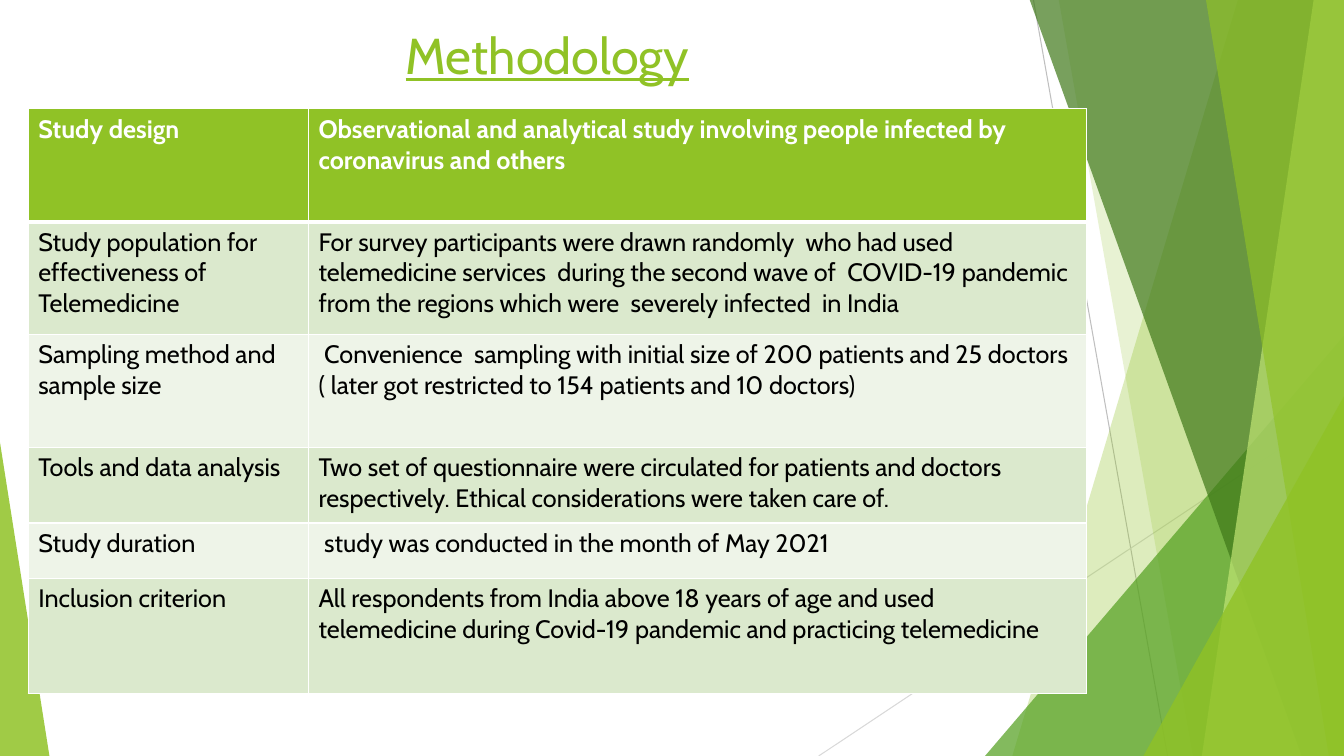
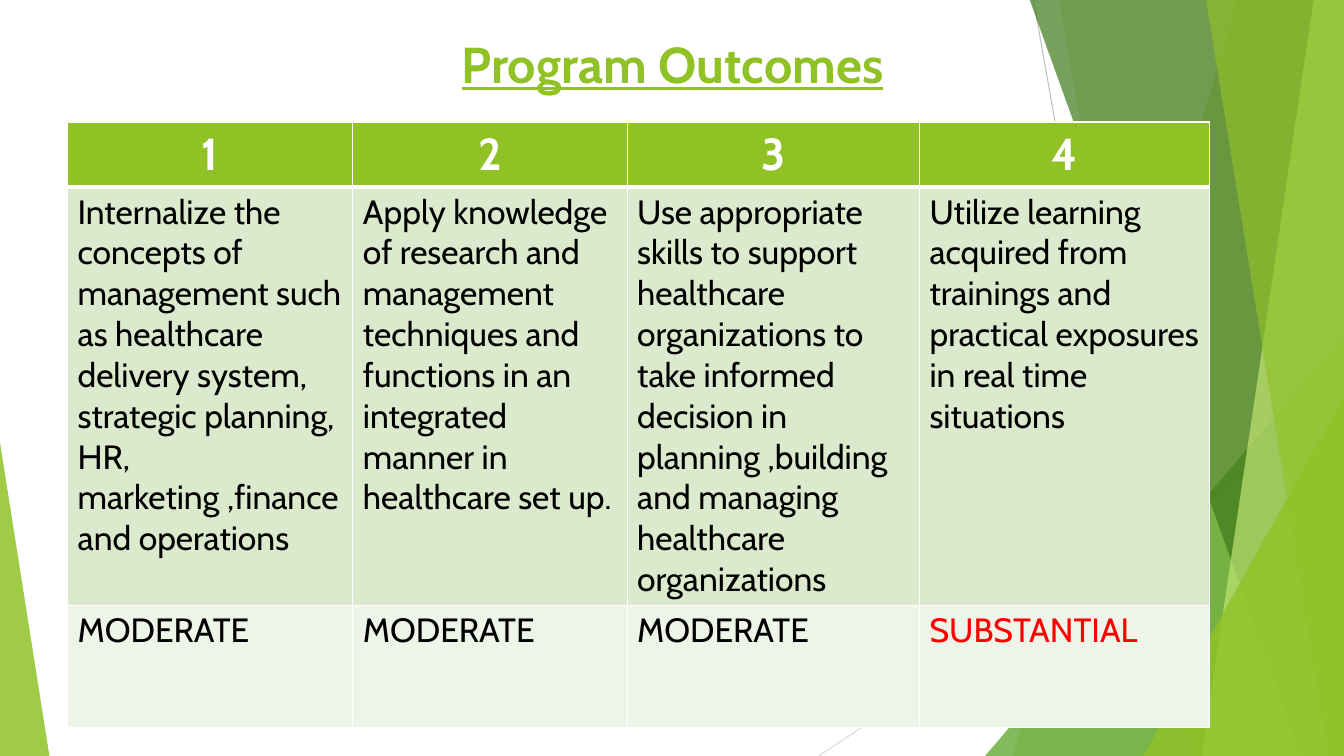
"""Builds two slides on telemedicine research: methodology and program outcomes."""

import dataclasses

import lxml.etree
import pptx
import pptx.dml.color
import pptx.enum.shapes
import pptx.enum.text
import pptx.oxml.ns
import pptx.presentation
import pptx.shapes.base
import pptx.slide
import pptx.table
import pptx.text.text
import pptx.util

PX = 9144
SLIDE_WIDTH, SLIDE_HEIGHT = 1333, 750
FONT = "Cabin"

LIME = pptx.dml.color.RGBColor(0x90, 0xC2, 0x26)
PALE_LIME = pptx.dml.color.RGBColor(0xC0, 0xE4, 0x74)
LEAF = pptx.dml.color.RGBColor(0x54, 0xA0, 0x21)
FOREST = pptx.dml.color.RGBColor(0x3F, 0x78, 0x19)
ROW_DARK = pptx.dml.color.RGBColor(0xDB, 0xE9, 0xCD)
ROW_LIGHT = pptx.dml.color.RGBColor(0xEE, 0xF4, 0xE8)
WHITE = pptx.dml.color.RGBColor(0xFF, 0xFF, 0xFF)
BLACK = pptx.dml.color.RGBColor(0x00, 0x00, 0x00)
RED = pptx.dml.color.RGBColor(0xFF, 0x00, 0x00)
GRAY = pptx.dml.color.RGBColor(0xBF, 0xBF, 0xBF)
LIGHT_GRAY = pptx.dml.color.RGBColor(0xD9, 0xD9, 0xD9)

LEFT = pptx.enum.text.PP_ALIGN.LEFT
CENTER = pptx.enum.text.PP_ALIGN.CENTER


@dataclasses.dataclass(frozen=True)
class Ray:
    start: tuple[int, int]
    end: tuple[int, int]
    color: pptx.dml.color.RGBColor


@dataclasses.dataclass(frozen=True)
class Band:
    top_left: int
    bottom_left: int
    color: pptx.dml.color.RGBColor
    opacity: int


@dataclasses.dataclass(frozen=True)
class Corner:
    left: int
    top: int
    width: int
    apex: int
    color: pptx.dml.color.RGBColor
    opacity: int


@dataclasses.dataclass(frozen=True)
class TableStyle:
    header_size: int
    body_size: int
    header_align: pptx.enum.text.PP_ALIGN


@dataclasses.dataclass(frozen=True)
class TableSlide:
    title: str
    title_bold: bool
    title_at: tuple[int, int, int, int]
    table_at: tuple[int, int]
    columns: list[int]
    heights: list[int]
    style: TableStyle
    rows: list[list[str]]


RAYS = [
    Ray((1025, 0), (1158, 750), GRAY),
    Ray((1333, 403), (812, 750), LIGHT_GRAY),
]
DECORATIONS = [
    Band(1228, 1004, LIME, 30),
    Band(1050, 1183, LIME, 20),
    Corner(977, 333, 356, 1, LEAF, 72),
    Band(1021, 1291, FOREST, 70),
    Band(1303, 1192, PALE_LIME, 70),
    Band(1196, 1318, LIME, 65),
    Corner(1134, 393, 199, 1, LIME, 80),
    Corner(0, 439, 49, 0, LIME, 85),
]
HIGHLIGHTS = {"SUBSTANTIAL": RED}

SLIDES = [
    TableSlide(
        title="Methodology",
        title_bold=False,
        title_at=(73, 19, 940, 144),
        table_at=(28, 108),
        columns=[278, 772],
        heights=[112, 112, 112, 75, 55, 114],
        style=TableStyle(18, 18, LEFT),
        rows=[
            ["Study design",
             "Observational and analytical study involving people infected by "
             "coronavirus and others"],
            ["Study population for effectiveness of Telemedicine",
             "For survey participants were drawn randomly  who had used "
             "telemedicine services  during the second wave of  COVID-19 pandemic "
             "from the regions which were  severely infected  in India"],
            ["Sampling method and sample size",
             " Convenience  sampling with initial size of 200 patients and 25 doctors "
             "( later got restricted to 154 patients and 10 doctors)"],
            ["Tools and data analysis",
             "Two set of questionnaire were circulated for patients and doctors "
             "respectively. Ethical considerations were taken care of."],
            ["Study duration", " study was conducted in the month of May 2021"],
            ["Inclusion criterion",
             "All respondents from India above 18 years of age and used "
             "telemedicine during Covid-19 pandemic and practicing telemedicine"],
        ],
    ),
    TableSlide(
        title="Program Outcomes",
        title_bold=True,
        title_at=(92, 28, 1150, 149),
        table_at=(67, 121),
        columns=[283, 272, 290, 288],
        heights=[58, 412, 121],
        style=TableStyle(32, 24, CENTER),
        rows=[
            ["1", "2", "3", "4"],
            ["Internalize the concepts of management such as healthcare delivery "
             "system, strategic planning, HR, marketing ,finance and operations",
             "Apply knowledge of research and management techniques and functions "
             "in an integrated manner in  healthcare set up.",
             "Use appropriate skills to support healthcare organizations to take "
             "informed decision in planning ,building and managing healthcare "
             "organizations",
             "Utilize learning acquired from trainings and practical exposures in "
             "real time situations"],
            ["MODERATE", "MODERATE", "MODERATE", "SUBSTANTIAL"],
        ],
    ),
]


def px(length: int) -> pptx.util.Emu:
    return pptx.util.Emu(length * PX)


def write_text(
    frame: pptx.text.text.TextFrame,
    text: str,
    *,
    size: int,
    color: pptx.dml.color.RGBColor,
    bold: bool = False,
    underline: bool = False,
    align: pptx.enum.text.PP_ALIGN = LEFT,
) -> None:
    para = frame.paragraphs[0]
    para.alignment = align
    span = para.add_run()
    span.text = text
    span.font.name = FONT
    span.font.size = pptx.util.Pt(size)
    span.font.color.rgb = color
    span.font.bold = bold
    span.font.underline = underline


def add_ray(page: pptx.slide.Slide, ray: Ray) -> None:
    line = page.shapes.add_connector(
        pptx.enum.shapes.MSO_CONNECTOR.STRAIGHT,
        *(px(value) for value in ray.start + ray.end),
    )
    line.line.color.rgb = ray.color
    line.line.width = pptx.util.Pt(0.75)
    lxml.etree.SubElement(line.element.spPr, pptx.oxml.ns.qn("a:effectLst"))


def add_decoration(page: pptx.slide.Slide, item: Band | Corner) -> None:
    if isinstance(item, Band):
        outline = page.shapes.build_freeform(item.top_left, -1, scale=PX)
        outline.add_line_segments([
            (SLIDE_WIDTH, -1),
            (SLIDE_WIDTH, SLIDE_HEIGHT),
            (item.bottom_left, SLIDE_HEIGHT),
        ])
        shape = outline.convert_to_shape()
    else:
        shape = page.shapes.add_shape(
            pptx.enum.shapes.MSO_SHAPE.ISOSCELES_TRIANGLE,
            px(item.left), px(item.top), px(item.width), px(SLIDE_HEIGHT - item.top),
        )
        shape.adjustments[0] = item.apex
    shape.shadow.inherit = False
    shape.line.fill.background()
    shape.fill.solid()
    shape.fill.fore_color.rgb = item.color
    color = shape.element.spPr.find(".//" + pptx.oxml.ns.qn("a:srgbClr"))
    alpha = lxml.etree.SubElement(color, pptx.oxml.ns.qn("a:alpha"))
    alpha.set("val", str(item.opacity * 1000))


def add_borders(cell: pptx.table._Cell, *, top: int, bottom: int) -> None:
    properties = cell._tc.get_or_add_tcPr()
    for side, points in (("L", 1), ("R", 1), ("T", top), ("B", bottom)):
        border = lxml.etree.SubElement(properties, pptx.oxml.ns.qn(f"a:ln{side}"))
        border.set("w", str(pptx.util.Pt(points)))
        fill = lxml.etree.SubElement(border, pptx.oxml.ns.qn("a:solidFill"))
        color = lxml.etree.SubElement(fill, pptx.oxml.ns.qn("a:srgbClr"))
        color.set("val", str(WHITE))


def add_table(page: pptx.slide.Slide, content: TableSlide) -> None:
    left, top = content.table_at
    table = page.shapes.add_table(
        len(content.heights), len(content.columns), px(left), px(top),
        px(sum(content.columns)), px(sum(content.heights)),
    ).table
    for column, width in zip(table.columns, content.columns):
        column.width = px(width)
    for index, (height, texts) in enumerate(zip(content.heights, content.rows)):
        table.rows[index].height = px(height)
        header = index == 0
        fill = LIME if header else (ROW_LIGHT, ROW_DARK)[index % 2]
        for cell, text in zip(table.rows[index].cells, texts):
            add_borders(cell, top=3 if index == 1 else 1, bottom=3 if header else 1)
            cell.fill.solid()
            cell.fill.fore_color.rgb = fill
            write_text(
                cell.text_frame,
                text,
                size=content.style.header_size if header else content.style.body_size,
                color=WHITE if header else HIGHLIGHTS.get(text, BLACK),
                bold=header,
                align=content.style.header_align if header else LEFT,
            )


def add_title(page: pptx.slide.Slide, content: TableSlide) -> None:
    box = page.shapes.title
    box.left, box.top, box.width, box.height = map(px, content.title_at)
    frame = box.text_frame
    frame.word_wrap = True
    frame.auto_size = pptx.enum.text.MSO_AUTO_SIZE.NONE
    frame.vertical_anchor = pptx.enum.text.MSO_ANCHOR.TOP
    write_text(frame, content.title, size=36, color=LIME,
               bold=content.title_bold, underline=True, align=CENTER)


def add_page(deck: pptx.presentation.Presentation, content: TableSlide) -> None:
    page = deck.slides.add_slide(deck.slide_layouts.get_by_name("Title Only"))
    for ray in RAYS:
        add_ray(page, ray)
    for item in DECORATIONS:
        add_decoration(page, item)
    add_title(page, content)
    add_table(page, content)


def main() -> None:
    deck = pptx.Presentation()
    deck.slide_width, deck.slide_height = px(SLIDE_WIDTH), px(SLIDE_HEIGHT)
    for content in SLIDES:
        add_page(deck, content)
    deck.save("out.pptx")


if __name__ == "__main__":
    main()
